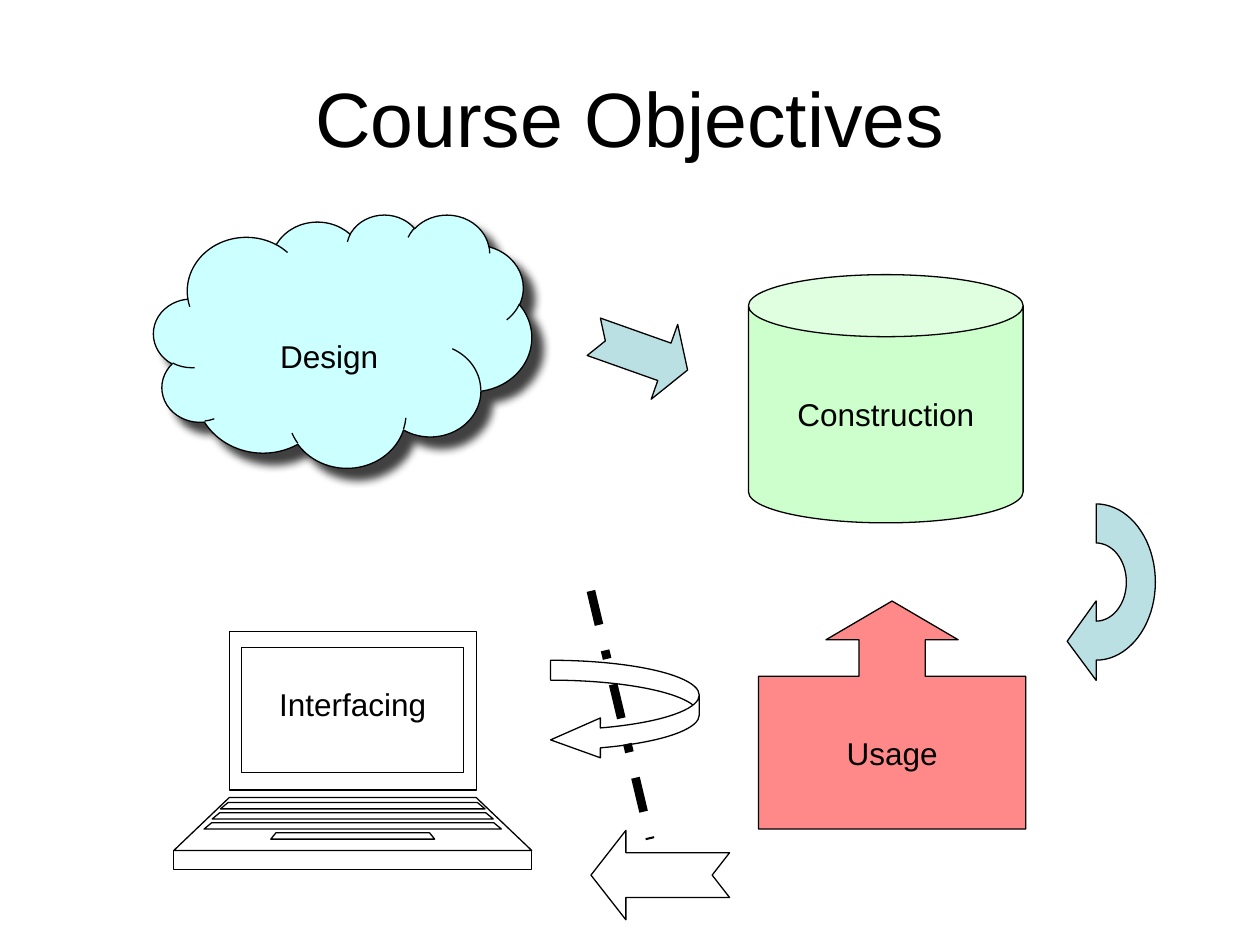
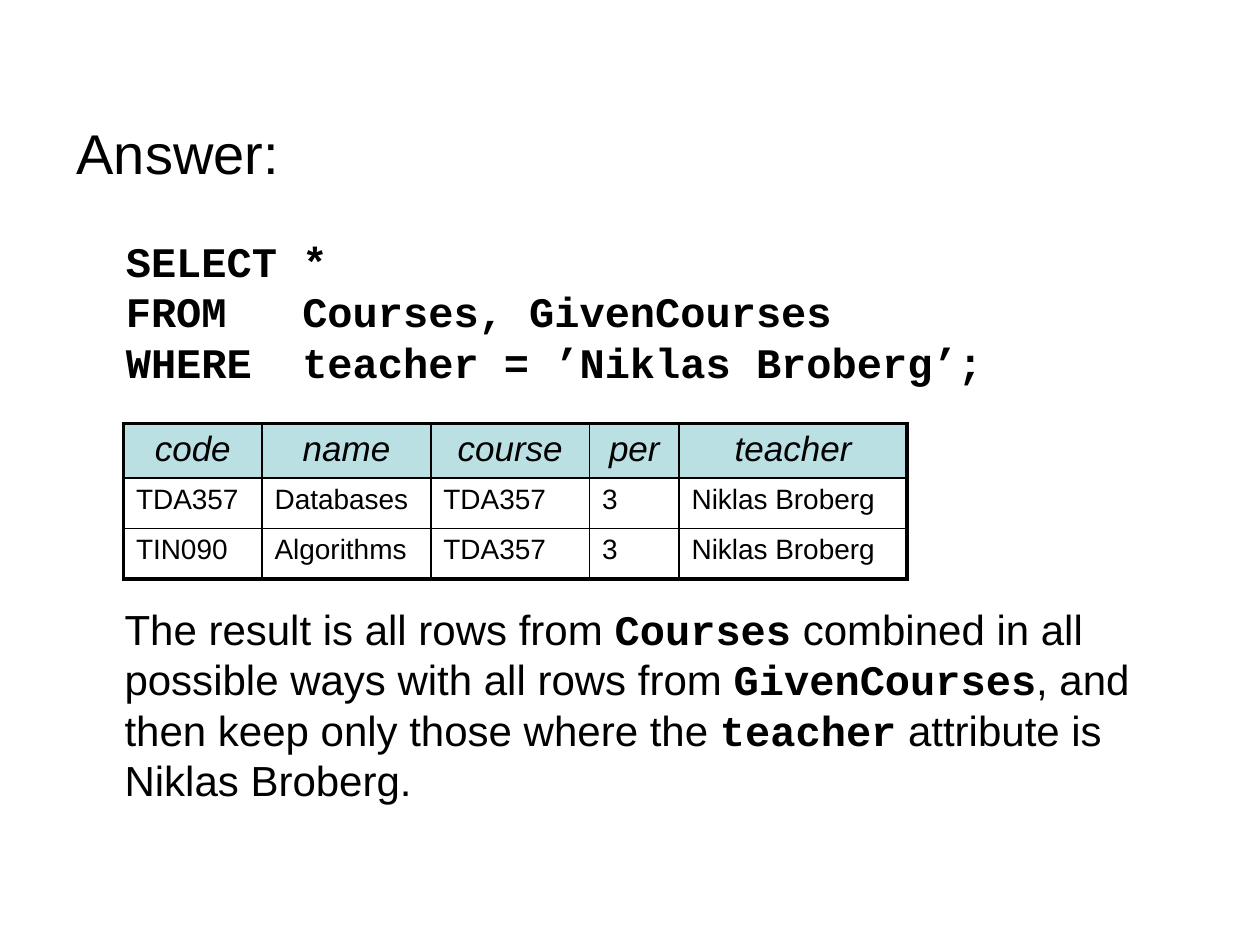
from dataclasses import dataclass
from math import cos, pi, sin
from typing import NamedTuple

from lxml import etree
from pptx import Presentation
from pptx import util as u
from pptx.dml.color import RGBColor
from pptx.enum import dml, shapes, text
from pptx.oxml import parse_xml
from pptx.oxml.ns import nsdecls, qn

BLACK = "000000"
WHITE = "FFFFFF"
CYAN = "CCFFFF"
GREEN = "CCFFCC"
RED = "FF8989"
TEAL = "BBE0E3"
SANS = "Arial"
MONO = "Courier New"
THIN, THICK = 1, 2.25
KIND = shapes.MSO_SHAPE
CENTER = text.PP_ALIGN.CENTER
LEFT = text.PP_ALIGN.LEFT


class Box(NamedTuple):
    left: float
    top: float
    width: float
    height: float

    def lengths(self) -> list:
        return [u.Inches(value) for value in self]


class Band(NamedTuple):
    top_half: float
    bottom_half: float
    top: float
    bottom: float

    def outline(self, center: float) -> list:
        return [
            (center - self.top_half, self.top),
            (center + self.top_half, self.top),
            (center + self.bottom_half, self.bottom),
            (center - self.bottom_half, self.bottom),
        ]


@dataclass
class Figure:
    kind: shapes.MSO_SHAPE
    box: Box
    fill: str = ""
    label: str = ""
    adjustments: tuple = ()
    rotation: float = 0
    flipped: bool = False


@dataclass
class Style:
    size: float
    font: str = SANS
    bold: bool = False
    italic: bool = False


LABEL = Style(18)
CODE = Style(24, MONO, bold=True)
PROSE = Style(24)


def color(value: str) -> RGBColor:
    return RGBColor.from_string(value)


def format_run(run, style: Style) -> None:
    run.font.name = style.font
    run.font.size = u.Pt(style.size)
    run.font.bold = style.bold
    run.font.italic = style.italic
    run.font.color.rgb = color(BLACK)


def write(text_frame, words: str, style: Style, alignment=LEFT) -> None:
    text_frame.text = words
    for paragraph in text_frame.paragraphs:
        paragraph.alignment = alignment
        for run in paragraph.runs:
            format_run(run, style)


def add_text(slide, box: Box, words: str, style: Style, alignment=LEFT):
    text_frame = slide.shapes.add_textbox(*box.lengths()).text_frame
    text_frame.word_wrap = True
    write(text_frame, words, style, alignment)
    return text_frame


def paint(shape, fill: str) -> None:
    shape.shadow.inherit = False
    if fill:
        shape.fill.solid()
        shape.fill.fore_color.rgb = color(fill)
    else:
        shape.fill.background()
    shape.line.color.rgb = color(BLACK)
    shape.line.width = u.Pt(0.75)


def put_label(shape, label: str, top_margin: float = 0) -> None:
    text_frame = shape.text_frame
    text_frame.word_wrap = False
    text_frame.vertical_anchor = text.MSO_ANCHOR.MIDDLE
    if top_margin:
        text_frame.vertical_anchor = text.MSO_ANCHOR.TOP
        text_frame.margin_top = u.Inches(top_margin)
    write(text_frame, label, LABEL, CENTER)


def add_figure(slide, figure: Figure):
    shape = slide.shapes.add_shape(figure.kind, *figure.box.lengths())
    paint(shape, figure.fill)
    for index, value in enumerate(figure.adjustments):
        shape.adjustments[index] = value
    shape.rotation = figure.rotation
    if figure.flipped:
        shape._element.spPr.find(qn("a:xfrm")).set("flipH", "1")
    if figure.label:
        put_label(shape, figure.label)
    return shape


def add_outline(slide, contours: list, fill: str = ""):
    builder = None
    for contour in contours:
        points = [(u.Inches(x), u.Inches(y)) for x, y in contour]
        if builder is None:
            builder = slide.shapes.build_freeform(*points[0], scale=1.0)
        else:
            builder.move_to(*points[0])
        builder.add_line_segments(points[1:], close=True)
    shape = builder.convert_to_shape()
    paint(shape, fill)
    return shape


def add_cloud(slide) -> None:
    cloud = add_figure(slide, Figure(KIND.CLOUD, Box(1.22, 1.7, 3, 2.01), CYAN))
    put_label(cloud, "Design", top_margin=0.67)
    effects = cloud._element.spPr.find(qn("a:effectLst"))
    effects.append(parse_xml(
        f'<a:outerShdw {nsdecls("a")} blurRad="{u.Pt(5)}" dist="{u.Pt(8.5)}" '
        f'dir="2700000" algn="ctr" rotWithShape="0"><a:srgbClr val="{BLACK}">'
        '<a:alpha val="75000"/></a:srgbClr></a:outerShdw>'
    ))


def add_laptop(slide) -> None:
    key_rows = [
        Band(0.99 + 0.065 * row, 1.05 + 0.065 * row, 6.37 + 0.08 * row, 6.42 + 0.08 * row)
        for row in range(3)
    ]
    lid = Band(0.98, 0.98, 5.01, 6.27)
    screen = Band(0.88, 0.88, 5.14, 6.13)
    deck = Band(0.98, 1.42, 6.33, 6.75)
    front = Band(1.42, 1.42, 6.75, 6.9)
    space_bar = Band(0.61, 0.65, 6.61, 6.66)
    bands = [lid, screen, deck, front, space_bar, *key_rows]
    laptop = add_outline(slide, [band.outline(2.8) for band in bands])
    put_label(laptop, "Interfacing", top_margin=0.43)


def half_ellipse(radius_x: float, radius_y: float, steps: int = 40) -> list:
    angles = [pi * step / steps - pi / 2 for step in range(steps + 1)]
    return [(8.7 + radius_x * cos(a), 4.62 + radius_y * sin(a)) for a in angles]


def add_bent_arrow(slide) -> None:
    inner = half_ellipse(0.24, 0.31)
    outer = half_ellipse(0.47, 0.62)
    head = [(8.7, 5.4), (8.47, 5.09), (8.7, 4.77)]
    add_outline(slide, [inner[::-1] + outer + head], TEAL)


def add_divider(slide) -> None:
    ends = [u.Inches(value) for value in (4.69, 4.69, 5.16, 6.66)]
    line = slide.shapes.add_connector(shapes.MSO_CONNECTOR.STRAIGHT, *ends)
    line.line.color.rgb = color(BLACK)
    line.line.width = u.Pt(5)
    line.line.dash_style = dml.MSO_LINE.DASH_DOT
    etree.SubElement(line._element.spPr, qn("a:effectLst"))


def build_objectives(slide) -> None:
    title = add_text(slide, Box(0.5, 0.3, 9, 1.25), "Course Objectives", Style(44), CENTER)
    title.vertical_anchor = text.MSO_ANCHOR.MIDDLE
    add_cloud(slide)
    add_laptop(slide)
    add_bent_arrow(slide)
    figures = [
        Figure(KIND.CAN, Box(5.94, 2.18, 2.18, 1.97), GREEN, "Construction", (0.25,)),
        Figure(KIND.UP_ARROW_CALLOUT, Box(6.02, 4.77, 2.12, 1.81), RED, "Usage",
               (0.29, 0.29, 0.17, 0.67)),
        Figure(KIND.NOTCHED_RIGHT_ARROW, Box(4.69, 2.49, 0.79, 0.63), TEAL,
               adjustments=(0.5, 0.31), rotation=19.5),
        Figure(KIND.NOTCHED_RIGHT_ARROW, Box(4.69, 6.59, 1.1, 0.71),
               adjustments=(0.5, 0.39), rotation=180),
        Figure(KIND.CURVED_RIGHT_ARROW, Box(4.37, 5.24, 1.18, 0.79),
               adjustments=(0.2, 0.4, 0.5), flipped=True),
    ]
    for figure in figures:
        add_figure(slide, figure)
    add_divider(slide)


def set_borders(cell, widths: dict) -> None:
    properties = cell._tc.get_or_add_tcPr()
    for side in "LRTB":
        properties.append(parse_xml(
            f'<a:ln{side} {nsdecls("a")} w="{u.Pt(widths[side])}"><a:solidFill>'
            f'<a:srgbClr val="{BLACK}"/></a:solidFill></a:ln{side}>'
        ))


def add_result_table(slide) -> None:
    rows = [
        ("code", "name", "course", "per", "teacher"),
        ("TDA357", "Databases", "TDA357", "3", "Niklas Broberg"),
        ("TIN090", "Algorithms", "TDA357", "3", "Niklas Broberg"),
    ]
    column_widths = (1.1, 1.34, 1.26, 0.71, 1.81)
    row_heights = (0.43, 0.4, 0.4)
    box = Box(0.98, 3.36, sum(column_widths), sum(row_heights))
    table = slide.shapes.add_table(len(rows), len(column_widths), *box.lengths()).table
    table.first_row = table.horz_banding = False
    for column, width in zip(table.columns, column_widths):
        column.width = u.Inches(width)
    last_row, last_column = len(rows) - 1, len(column_widths) - 1
    for r, values in enumerate(rows):
        table.rows[r].height = u.Inches(row_heights[r])
        style = Style(16) if r else Style(20, italic=True)
        for c, value in enumerate(values):
            cell = table.cell(r, c)
            write(cell.text_frame, value, style, LEFT if r else CENTER)
            outer = {"L": c == 0, "R": c == last_column, "T": r == 0, "B": r == last_row}
            set_borders(cell, {side: THICK if edge else THIN for side, edge in outer.items()})
            cell.fill.solid()
            cell.fill.fore_color.rgb = color(WHITE if r else TEAL)


def build_answer(slide) -> None:
    add_text(slide, Box(0.51, 0.89, 9.13, 0.65), "Answer:", Style(32))
    add_result_table(slide)
    query = "SELECT *\nFROM   Courses, GivenCourses\nWHERE  teacher = ’Niklas Broberg’;"
    for paragraph in add_text(slide, Box(0.9, 1.82, 7.01, 1.3), query, CODE).paragraphs:
        paragraph.line_spacing = u.Pt(28.8)
    parts = [
        ("The result is all rows from ", PROSE),
        ("Courses", CODE),
        (" combined in all possible ways with all rows from ", PROSE),
        ("GivenCourses", CODE),
        (", and then keep only those where the ", PROSE),
        ("teacher", CODE),
        (" attribute is Niklas Broberg.", PROSE),
    ]
    explanation = add_text(slide, Box(0.89, 4.74, 8.75, 1.75), "", PROSE)
    for words, style in parts:
        run = explanation.paragraphs[0].add_run()
        run.text = words
        format_run(run, style)


def main() -> None:
    presentation = Presentation()
    presentation.slide_width = u.Inches(10)
    presentation.slide_height = u.Inches(7.5)
    for build in (build_objectives, build_answer):
        build(presentation.slides.add_slide(presentation.slide_layouts[6]))
    presentation.save("out.pptx")


if __name__ == "__main__":
    main()
